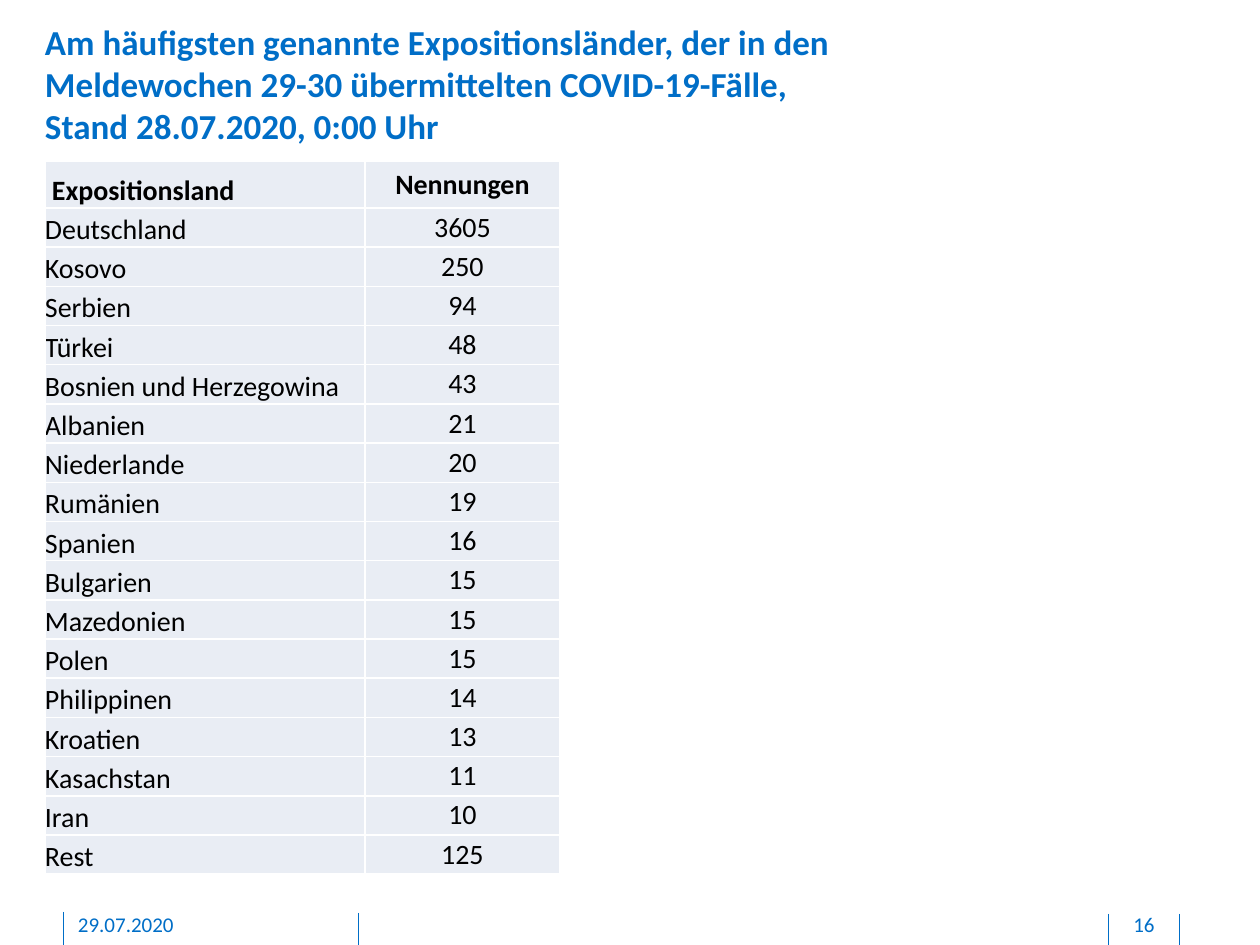
import pptx
import pptx.dml.color
import pptx.enum.shapes
import pptx.enum.text
import pptx.oxml.ns
import pptx.util
from lxml import etree

PX = 914400 // 126
FONT = "Calibri"
COLOURS = {"blue": "006EC7", "text": "000000", "cell": "E9EDF4", "border": "FFFFFF"}
ALIGN = pptx.enum.text.PP_ALIGN
ANCHOR = pptx.enum.text.MSO_ANCHOR

TITLE = ("Am häufigsten genannte Expositionsländer, der in den Meldewochen 29-30 "
         "übermittelten COVID-19-Fälle, \vStand 28.07.2020, 0:00 Uhr")
HEADER = ("Expositionsland", "Nennungen")
COUNTRIES = [
    ("Deutschland", 3605), ("Kosovo", 250), ("Serbien", 94), ("Türkei", 48),
    ("Bosnien und Herzegowina", 43), ("Albanien", 21), ("Niederlande", 20),
    ("Rumänien", 19), ("Spanien", 16), ("Bulgarien", 15), ("Mazedonien", 15),
    ("Polen", 15), ("Philippinen", 14), ("Kroatien", 13), ("Kasachstan", 11),
    ("Iran", 10), ("Rest", 125),
]
COLUMN_WIDTHS = (320, 195)
HEADER_HEIGHT = 47
BODY_HEIGHT = 667


def px(*lengths):
    return [length * PX for length in lengths]


def colour(name):
    return pptx.dml.color.RGBColor.from_string(COLOURS[name])


def format_para(para, size, colour_name, bold=False, align=ALIGN.LEFT):
    para.alignment = align
    para.font.name = FONT
    para.font.size = pptx.util.Pt(size)
    para.font.bold = bold
    para.font.color.rgb = colour(colour_name)


def set_margins(target, left=0, top=0, right=0, bottom=0):
    """Set the insets, in px, of a text frame or a table cell."""
    target.margin_left, target.margin_top, target.margin_right, target.margin_bottom = px(
        left, top, right, bottom)


def set_title(page):
    title = page.shapes.title
    title.left, title.top, title.width, title.height = px(45, 20, 919, 127)
    frame = title.text_frame
    frame.text = TITLE
    frame.word_wrap = True
    frame.auto_size = pptx.enum.text.MSO_AUTO_SIZE.NONE
    frame.vertical_anchor = ANCHOR.TOP
    set_margins(frame)
    format_para(frame.paragraphs[0], 20, "blue", bold=True)


def add_footer_text(page, text, left, width, align):
    box = page.shapes.add_textbox(*px(left, 912, width, 27))
    frame = box.text_frame
    frame.text = text
    frame.word_wrap = True
    set_margins(frame, bottom=6)
    format_para(frame.paragraphs[0], 12, "blue", align=align)


def add_footer_line(page, x, top):
    line = page.shapes.add_connector(
        pptx.enum.shapes.MSO_CONNECTOR.STRAIGHT, *px(x, top, x, 945))
    line.line.color.rgb = colour("blue")
    line.line.width = pptx.util.Pt(0.5)
    etree.SubElement(line._element.spPr, pptx.oxml.ns.qn("a:effectLst"))


def set_borders(cell):
    properties = cell._tc.get_or_add_tcPr()
    for index, side in enumerate(("lnL", "lnR", "lnT", "lnB")):
        border = etree.Element(pptx.oxml.ns.qn("a:" + side), w=str(pptx.util.Pt(1)))
        fill = etree.SubElement(border, pptx.oxml.ns.qn("a:solidFill"))
        etree.SubElement(fill, pptx.oxml.ns.qn("a:srgbClr"), val=COLOURS["border"])
        properties.insert(index, border)


def fill_cell(cell, text, is_header, is_number):
    cell.text = str(text)
    cell.fill.solid()
    cell.fill.fore_color.rgb = colour("cell")
    cell.vertical_anchor = ANCHOR.MIDDLE if is_number else ANCHOR.BOTTOM
    inset = 1 if is_header else 0
    set_margins(cell, 7 if is_header and not is_number else inset, inset, inset)
    format_para(cell.text_frame.paragraphs[0], 16, "text", bold=is_header,
                align=ALIGN.CENTER if is_number else ALIGN.LEFT)
    set_borders(cell)


def add_country_table(page):
    rows = [HEADER] + COUNTRIES
    frame = page.shapes.add_table(
        len(rows), len(HEADER),
        *px(45, 161, sum(COLUMN_WIDTHS), HEADER_HEIGHT + BODY_HEIGHT))
    table = frame.table
    for column, width in zip(table.columns, COLUMN_WIDTHS):
        column.width = width * PX
    for index, values in enumerate(rows):
        is_header = index == 0
        table.rows[index].height = (
            HEADER_HEIGHT * PX if is_header else BODY_HEIGHT * PX // len(COUNTRIES))
        for column, value in enumerate(values):
            fill_cell(table.cell(index, column), value, is_header, column == 1)


def main():
    deck = pptx.Presentation()
    deck.slide_width, deck.slide_height = px(1260, 945)
    page = deck.slides.add_slide(deck.slide_layouts.get_by_name("Title Only"))
    for x, top in ((358, 913), (63, 912), (1180, 914), (1108, 914)):
        add_footer_line(page, x, top)
    set_title(page)
    add_footer_text(page, "29.07.2020", 78, 256, ALIGN.LEFT)
    add_footer_text(page, "16", 1110, 68, ALIGN.CENTER)
    add_country_table(page)
    deck.save("out.pptx")


if __name__ == "__main__":
    main()
